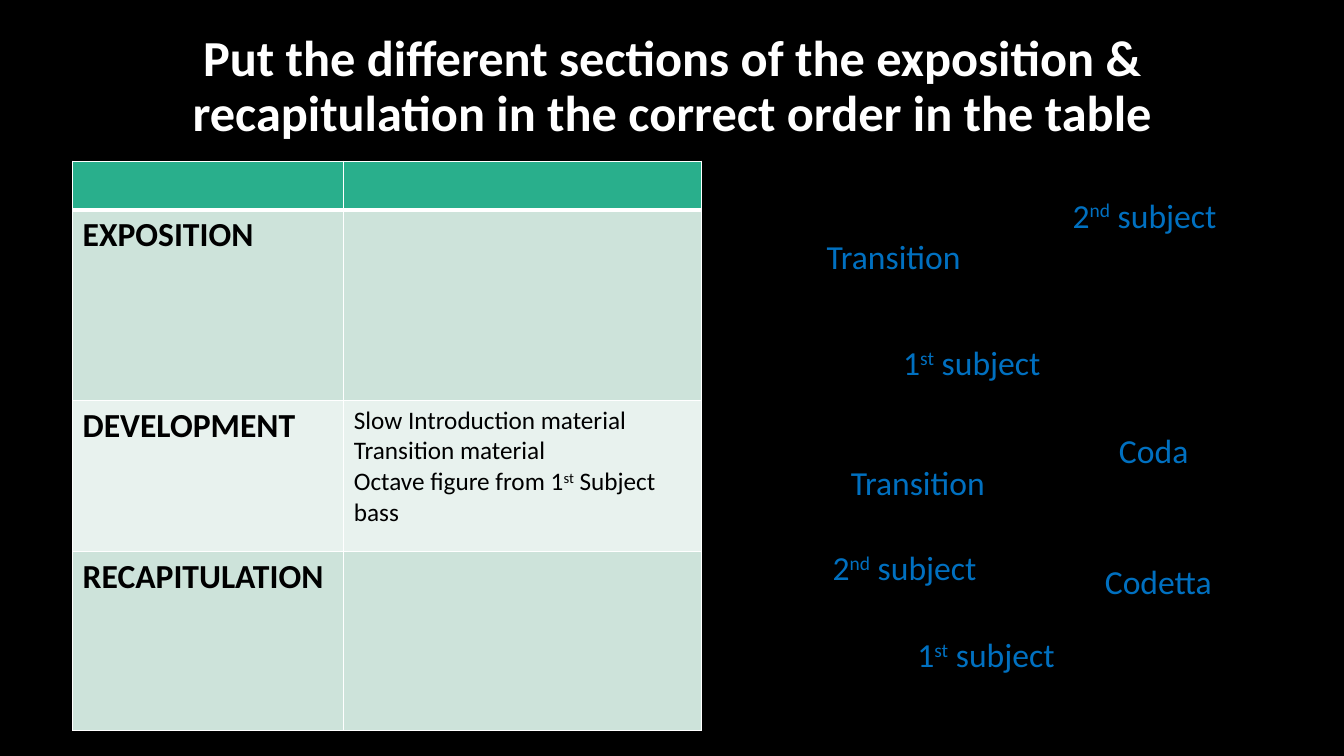
from dataclasses import dataclass

from lxml.etree import SubElement
from pptx import Presentation
from pptx.dml.color import RGBColor as RGB
from pptx.enum.text import MSO_ANCHOR as Anchor
from pptx.enum.text import MSO_AUTO_SIZE as Auto
from pptx.enum.text import PP_ALIGN as Align
from pptx.oxml.ns import qn
from pptx.util import Emu, Pt

SCALE = 9144  # EMU in one px, 100 px to the inch


@dataclass(frozen=True)
class Theme:
    font: str = "Calibri"
    back: str = "000000"
    white: str = "FFFFFF"
    ink: str = "000000"
    blue: str = "0070C0"
    head: str = "29AF8C"
    dark: str = "CDE3DA"
    light: str = "E8F2EE"
    title: int = 36
    label: int = 24
    note: int = 18


THEME = Theme()

TITLE = ("Put the different sections of the exposition & "
         "recapitulation in the correct order in the table")
COLS = (269, 355)
ROWS = (48, 189, 150, 178)
BANDS = (THEME.head, THEME.dark, THEME.light, THEME.dark)
STAGES = ("EXPOSITION", "DEVELOPMENT", "RECAPITULATION")
NOTES = ("Slow Introduction material", "Transition material",
         "Octave figure from 1^st^ Subject bass")
CARDS = (
    ("Transition", 810, 229),
    ("1^st^ subject", 886, 334),
    ("2^nd^ subject", 1054, 188),
    ("Coda", 1100, 422),
    ("Codetta", 1086, 552),
    ("1^st^ subject", 900, 624),
    ("2^nd^ subject", 816, 538),
    ("Transition", 834, 453),
)


def px(*sizes):
    return [Emu(size * SCALE) for size in sizes]


def write(par, text, size, color, bold=False):
    """Fill a paragraph; parts between carets are superscript."""
    for num, part in enumerate(text.split("^")):
        run = par.add_run()
        run.text = part
        font = run.font
        font.name, font.size, font.bold = THEME.font, Pt(size), bold
        font.color.rgb = RGB.from_string(color)
        if num % 2:
            run._r.get_or_add_rPr().set("baseline", "30000")


def add_title(slide):
    title = slide.shapes.title
    title.left, title.top, title.width, title.height = px(92, 40, 1150, 94)
    frame = title.text_frame
    frame.auto_size = Auto.NONE
    frame.vertical_anchor = Anchor.MIDDLE
    par = frame.paragraphs[0]
    par.alignment, par.line_spacing = Align.CENTER, 0.9
    write(par, TITLE, THEME.title, THEME.white, True)


def add_card(slide, text, left, top):
    frame = slide.shapes.add_textbox(*px(left, top, 200, 50)).text_frame
    frame.word_wrap = True
    frame.auto_size = Auto.SHAPE_TO_FIT_TEXT
    write(frame.paragraphs[0], text, THEME.label, THEME.blue)


def edge(cell, side, width):
    props = cell._tc.get_or_add_tcPr()
    line = SubElement(props, qn(f"a:ln{side}"), w=str(Pt(width)))
    SubElement(SubElement(line, qn("a:solidFill")),
               qn("a:srgbClr"), val=THEME.white)


def paint(cell, row):
    """Draw borders, heavy under the header, and then the band fill."""
    heavy = {(0, "B"), (1, "T")}
    for side in "LRTB":
        edge(cell, side, 3 if (row, side) in heavy else 1)
    cell.fill.solid()
    cell.fill.fore_color.rgb = RGB.from_string(BANDS[row])


def add_grid(slide):
    grid = slide.shapes.add_table(
        len(ROWS), len(COLS), *px(72, 160, sum(COLS), sum(ROWS))).table
    for col, width in zip(grid.columns, px(*COLS)):
        col.width = width
    for num, height in enumerate(px(*ROWS)):
        grid.rows[num].height = height
        for cell in grid.rows[num].cells:
            paint(cell, num)
    for num, stage in enumerate(STAGES, 1):
        par = grid.cell(num, 0).text_frame.paragraphs[0]
        write(par, stage, THEME.label, THEME.ink, True)
    frame = grid.cell(2, 1).text_frame
    for num, note in enumerate(NOTES):
        par = frame.add_paragraph() if num else frame.paragraphs[0]
        write(par, note, THEME.note, THEME.ink)


def main():
    deck = Presentation()
    deck.slide_width, deck.slide_height = px(1333, 750)
    slide = deck.slides.add_slide(deck.slide_layouts[5])
    back = slide.background.fill
    back.solid()
    back.fore_color.rgb = RGB.from_string(THEME.back)
    add_title(slide)
    add_grid(slide)
    for card in CARDS:
        add_card(slide, *card)
    deck.save("out.pptx")


if __name__ == "__main__":
    main()
